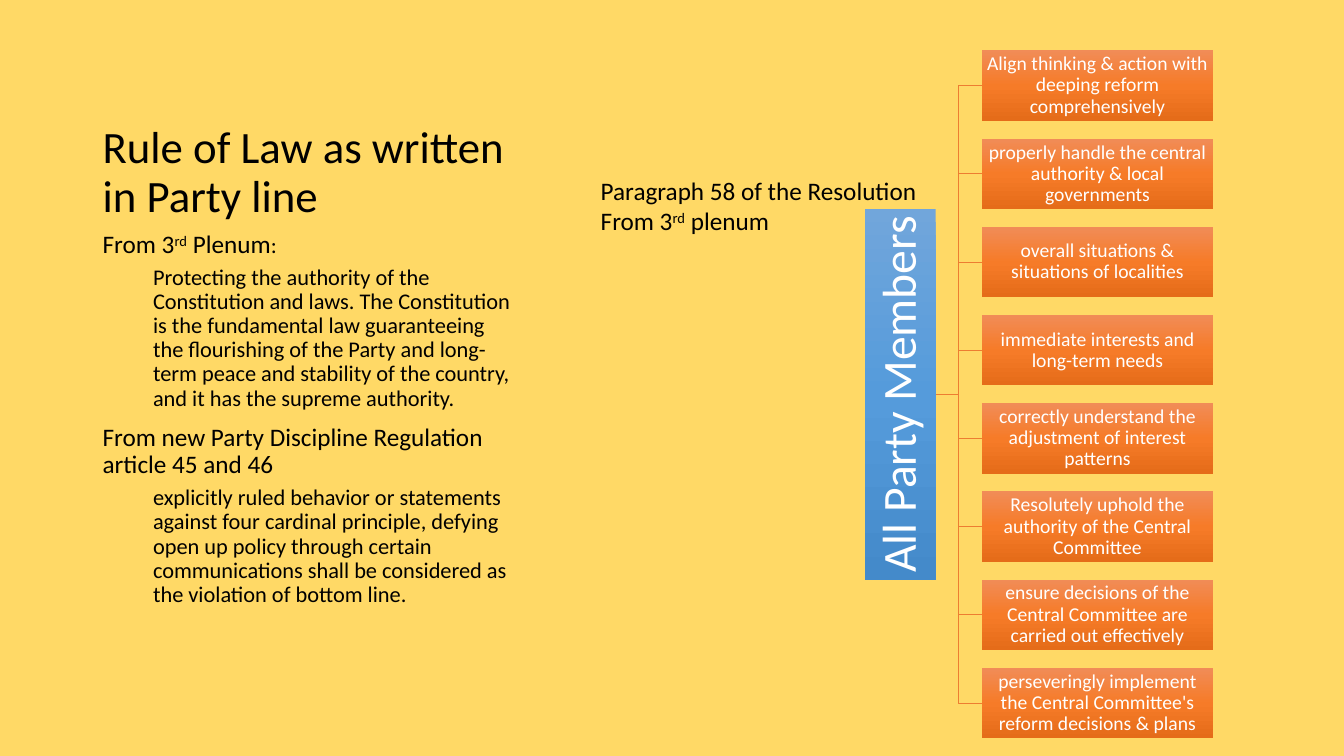
from lxml import etree
from pptx import Presentation
from pptx.dml.color import RGBColor
from pptx.enum.shapes import MSO_CONNECTOR as Connector, MSO_SHAPE as Shape
from pptx.enum.text import MSO_ANCHOR as Anchor, PP_ALIGN as Align
from pptx.oxml import parse_xml
from pptx.oxml.ns import nsdecls, qn
from pptx.util import Inches, Pt

FONT = "Calibri"
COLORS = {"background": "FFD966", "text": "000000", "label": "FFFFFF", "branch": "ED7D31"}
GRADIENTS = {"blue": ["71A6DB", "559BDB", "448ACA"], "orange": ["F18C57", "F67B28", "E56C19"]}
LEFT_COLUMN, LEFT_WIDTH = 0.92, 4.3
DUTY_LEFT, DUTY_TOP, DUTY_WIDTH, BOX_HEIGHT, ROW_STEP = 9.74, 0.5, 2.29, 0.7, 0.875
ROOT_RIGHT, ROOT_LENGTH = 9.28, 3.68
DUTIES = [
    "Align thinking & action with deeping reform comprehensively",
    "properly handle the central authority & local governments",
    "overall situations & situations of localities",
    "immediate interests and long-term needs",
    "correctly understand the adjustment of interest patterns",
    "Resolutely uphold the authority of the Central Committee",
    "ensure decisions of the Central Committee are carried out effectively",
    "perseveringly implement the Central Committee's reform decisions & plans",
]
PROTECTING = (
    "Protecting the authority of the Constitution and laws. The Constitution is the "
    "fundamental law guaranteeing the flourishing of the Party and long-term peace and "
    "stability of the country, and it has the supreme authority."
)
RULED = (
    "explicitly ruled behavior or statements against four cardinal principle, defying open up "
    "policy through certain communications shall be considered as the violation of bottom line."
)


def add_run(paragraph, text, size, color="text", raised=False):
    """Append one formatted run to a paragraph."""
    run = paragraph.add_run()
    run.text = text
    run.font.size, run.font.name = Pt(size), FONT
    run.font.color.rgb = RGBColor.from_string(COLORS[color])
    if raised:
        run.font._element.set("baseline", "30000")


def add_text(slide, place, paragraphs, anchor=Anchor.TOP, wrap=True):
    """Add a text box from (runs, indent, space before, line spacing) paragraphs."""
    frame = slide.shapes.add_textbox(*map(Inches, place)).text_frame
    frame.word_wrap, frame.vertical_anchor = wrap, anchor
    for index, (runs, indent, before, spacing) in enumerate(paragraphs):
        paragraph = frame.add_paragraph() if index else frame.paragraphs[0]
        paragraph.line_spacing = spacing
        paragraph.space_before = Pt(before)
        if indent:
            properties = paragraph._p.get_or_add_pPr()
            properties.set("marL", str(Inches(indent)))
            properties.set("indent", "0")
        for run in runs:
            add_run(paragraph, *run)


def set_gradient(shape, colors):
    """Fill a shape from top to bottom, whatever its rotation."""
    stops = "".join(
        f'<a:gs pos="{index * 50000}"><a:srgbClr val="{color}"/></a:gs>'
        for index, color in enumerate(colors)
    )
    gradient = parse_xml(
        f'<a:gradFill {nsdecls("a")} rotWithShape="0"><a:gsLst>{stops}</a:gsLst>'
        '<a:lin ang="5400000" scaled="0"/></a:gradFill>'
    )
    shape._element.spPr.find(qn("a:prstGeom")).addnext(gradient)


def add_box(slide, place, text, size, gradient, inset, rotation=0):
    """Add a gradient rectangle with a centred label."""
    box = slide.shapes.add_shape(Shape.RECTANGLE, *map(Inches, place))
    box.rotation = rotation
    box.shadow.inherit = False
    box.line.fill.background()
    set_gradient(box, GRADIENTS[gradient])
    frame = box.text_frame
    frame.word_wrap, frame.vertical_anchor = True, Anchor.MIDDLE
    frame.margin_left = frame.margin_right = Inches(inset)
    frame.margin_top = frame.margin_bottom = Inches(inset)
    paragraph = frame.paragraphs[0]
    paragraph.alignment, paragraph.line_spacing = Align.CENTER, 0.9
    add_run(paragraph, text, size, "label")


def add_branch(slide, start_y, end_y):
    """Add an elbow line from the root box to one duty box."""
    points = map(Inches, (ROOT_RIGHT, start_y, DUTY_LEFT, end_y))
    branch = slide.shapes.add_connector(Connector.ELBOW, *points)
    branch.line.color.rgb = RGBColor.from_string(COLORS["branch"])
    branch.line.width = Pt(0.5)
    etree.SubElement(branch._element.spPr, qn("a:effectLst"))


def add_hierarchy(slide):
    """Add the root box, its branches and the column of duties."""
    tops = [DUTY_TOP + row * ROW_STEP for row in range(len(DUTIES))]
    middle = (tops[0] + tops[-1] + BOX_HEIGHT) / 2
    for top in tops:
        add_branch(slide, middle, top + BOX_HEIGHT / 2)
    root_left = ROOT_RIGHT - (BOX_HEIGHT + ROOT_LENGTH) / 2
    root_place = (root_left, middle - BOX_HEIGHT / 2, ROOT_LENGTH, BOX_HEIGHT)
    add_box(slide, root_place, "All Party Members", 34, "blue", 0.02, 270)
    for top, duty in zip(tops, DUTIES):
        add_box(slide, (DUTY_LEFT, top, DUTY_WIDTH, BOX_HEIGHT), duty, 14, "orange", 0.01)


def main():
    """Build and save the slide."""
    presentation = Presentation()
    presentation.slide_width, presentation.slide_height = Inches(13.33), Inches(7.5)
    slide = presentation.slides.add_slide(presentation.slide_layouts[6])
    slide.background.fill.solid()
    slide.background.fill.fore_color.rgb = RGBColor.from_string(COLORS["background"])

    title = [([("Rule of Law as written in Party line", 32)], 0, 0, 0.9)]
    add_text(slide, (LEFT_COLUMN, 0.5, LEFT_WIDTH, 1.75), title, Anchor.BOTTOM)
    third = [("From 3", 18), ("rd", 18, "text", True)]
    body = [
        (third + [(" Plenum", 18), (":", 16)], 0, 0, 0.9),
        ([(PROTECTING, 16)], 0.5, 5, 0.9),
        ([("From new Party Discipline Regulation article 45 and 46", 18)], 0, 10, 0.9),
        ([(RULED, 16)], 0.5, 5, 0.9),
    ]
    add_text(slide, (LEFT_COLUMN, 2.25, LEFT_WIDTH, 5.08), body)
    add_hierarchy(slide)
    resolution = [
        ([("Paragraph 58 of the Resolution", 18)], 0, 0, 1.0),
        (third + [(" plenum", 18)], 0, 0, 1.0),
    ]
    add_text(slide, (5.86, 1.69, 3.37, 1.01), resolution, wrap=False)
    presentation.save("out.pptx")


if __name__ == "__main__":
    main()
